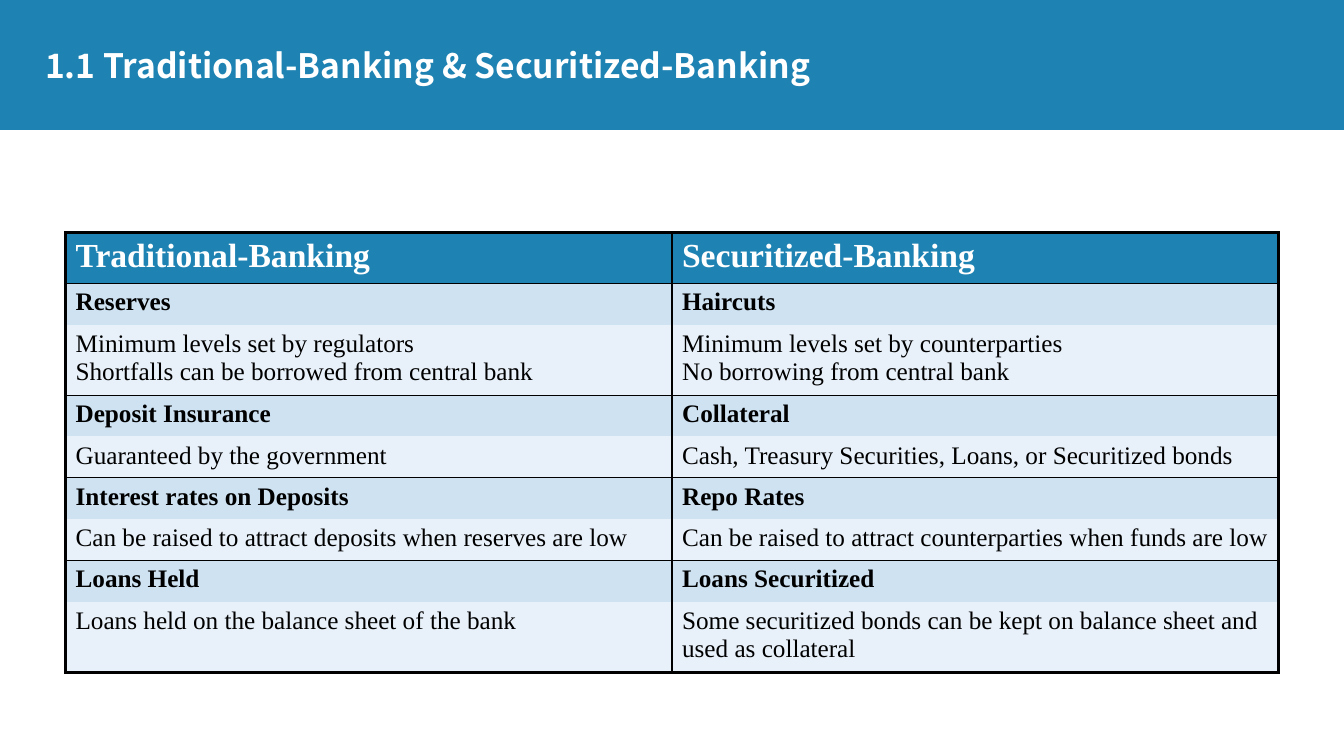
import pptx
import pptx.util
import pptx.dml.color
import pptx.enum.shapes
import pptx.enum.text
import pptx.oxml
import pptx.oxml.ns

Inches = pptx.util.Inches
Pt = pptx.util.Pt

BLUE, WHITE, BLACK = "1E83B3", "FFFFFF", "000000"
TOPIC, DETAIL = "CEE2F2", "E8F1F9"
THICK, THIN = 2.25, 1

HEADER = ("Traditional-Banking", "Securitized-Banking")
# Each section is a row of topics followed by a row of details.
SECTIONS = [
    (("Reserves", "Haircuts"),
     ("Minimum levels set by regulators\nShortfalls can be borrowed from central bank",
      "Minimum levels set by counterparties\nNo borrowing from central bank")),
    (("Deposit Insurance", "Collateral"),
     ("Guaranteed by the government",
      "Cash, Treasury Securities, Loans, or Securitized bonds")),
    (("Interest rates on Deposits", "Repo Rates"),
     ("Can be raised to attract deposits when reserves are low",
      "Can be raised to attract counterparties when funds are low")),
    (("Loans Held", "Loans Securitized"),
     ("Loans held on the balance sheet of the bank",
      "Some securitized bonds can be kept on balance sheet and used as collateral")),
]


def paint(fill, color):
    fill.solid()
    fill.fore_color.rgb = pptx.dml.color.RGBColor.from_string(color)


def style(frame, name, size, color, bold):
    for para in frame.paragraphs:
        font = para.font
        font.name, font.size, font.bold = name, Pt(size), bold
        font.color.rgb = pptx.dml.color.RGBColor.from_string(color)


def add_panel(slide):
    panel = slide.shapes.add_shape(
        pptx.enum.shapes.MSO_SHAPE.RECTANGLE,
        Inches(0), Inches(1.29), Inches(13.33), Inches(6.21))
    panel.shadow.inherit = False
    paint(panel.fill, WHITE)
    panel.line.fill.background()


def add_title(slide, text):
    box = slide.shapes.add_textbox(
        Inches(0.35), Inches(0.28), Inches(9.46), Inches(0.79))
    frame = box.text_frame
    frame.word_wrap = True
    frame.vertical_anchor = pptx.enum.text.MSO_ANCHOR.MIDDLE
    frame.text = text
    frame.paragraphs[0].line_spacing = 0.9
    style(frame, "Noto Sans CJK SC", 24, WHITE, True)


def set_edges(cell, edges):
    """Draw cell borders; edges maps L, R, T, B to a width in points, 0 for none."""
    props = cell._tc.get_or_add_tcPr()
    for side in "LRTB":
        width = edges[side]
        line = (f'<a:solidFill><a:srgbClr val="{BLACK}"/></a:solidFill>'
                if width else "<a:noFill/>")
        props.append(pptx.oxml.parse_xml(
            f'<a:ln{side} {pptx.oxml.ns.nsdecls("a")} w="{Pt(width)}">'
            f'{line}</a:ln{side}>'))


def fill_cell(cell, text, size, color, bold, back, edges):
    cell.text = text
    style(cell.text_frame, "Times New Roman", size, color, bold)
    set_edges(cell, edges)
    paint(cell.fill, back)


def add_grid(slide):
    rows = [(HEADER, 24, WHITE, True, BLUE)]
    for topics, details in SECTIONS:
        rows.append((topics, 18, BLACK, True, TOPIC))
        rows.append((details, 18, BLACK, False, DETAIL))
    last = len(rows) - 1
    table = slide.shapes.add_table(
        len(rows), 2, Inches(0.65), Inches(2.31),
        Inches(12.03), Inches(0.41 * len(rows))).table
    for r, (texts, size, color, bold, back) in enumerate(rows):
        topic = r % 2 == 1
        top = THICK if r == 0 else THIN if topic else 0
        bottom = THICK if r == last else 0 if topic else THIN
        for c, text in enumerate(texts):
            edges = {"L": THIN if c else THICK, "R": THICK if c else THIN,
                     "T": top, "B": bottom}
            fill_cell(table.cell(r, c), text, size, color, bold, back, edges)


def main():
    deck = pptx.Presentation()
    deck.slide_width, deck.slide_height = Inches(13.33), Inches(7.5)
    slide = deck.slides.add_slide(deck.slide_layouts[6])
    paint(slide.background.fill, BLUE)
    add_panel(slide)
    add_title(slide, "1.1 Traditional-Banking & Securitized-Banking")
    add_grid(slide)
    deck.save("out.pptx")


if __name__ == "__main__":
    main()
